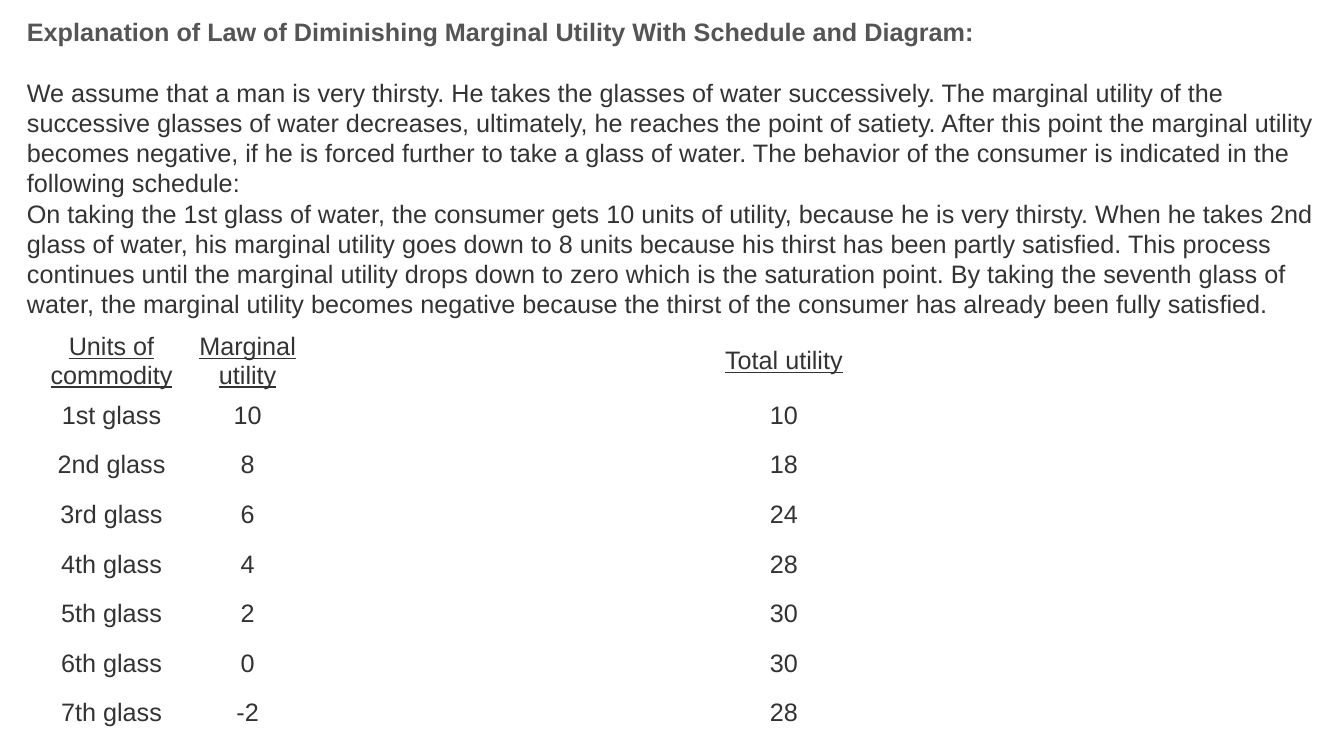
from pptx import Presentation
from pptx.dml.color import RGBColor
from pptx.enum import shapes, text
from pptx.util import Cm, Pt

# Content
TITLE = "Explanation of Law of Diminishing Marginal Utility With Schedule and Diagram:"
EXPLANATION = [
    "We assume that a man is very thirsty. He takes the glasses of water successively. "
    "The marginal utility of the successive glasses of water decreases, ultimately, he "
    "reaches the point of satiety. After this point the marginal utility becomes negative, "
    "if he is forced further to take a glass of water. The behavior of the consumer is "
    "indicated in the following schedule:",
    "On taking the 1st glass of water, the consumer gets 10 units of utility, because he is "
    "very thirsty. When he takes 2nd glass of water, his marginal utility goes down to 8 "
    "units because his thirst has been partly satisfied. This process continues until the "
    "marginal utility drops down to zero which is the saturation point. By taking the "
    "seventh glass of water, the marginal utility becomes negative because the thirst of "
    "the consumer has already been fully satisfied.",
]
SCHEDULE = [
    ("Units of commodity", "Marginal utility", "Total utility"),
    ("1st glass", "10", "10"),
    ("2nd glass", "8", "18"),
    ("3rd glass", "6", "24"),
    ("4th glass", "4", "28"),
    ("5th glass", "2", "30"),
    ("6th glass", "0", "30"),
    ("7th glass", "-2", "28"),
]

# Style and layout
WHITE = RGBColor(0xFF, 0xFF, 0xFF)
TITLE_GREY = RGBColor(0x55, 0x55, 0x55)
TEXT_GREY = RGBColor(0x33, 0x33, 0x33)
LINE_PITCH = Pt(21.6)
COLUMN_WIDTHS = [Cm(3.38), Cm(3.48), Cm(23.55)]
ROW_HEIGHT = Cm(1.25)
CELL_MARGIN = Cm(0.03)


def format_runs(paragraph, color, bold=False, underline=False):
    for run in paragraph.runs:
        run.font.name = "Arial"
        run.font.size = Pt(18)
        run.font.color.rgb = color
        run.font.bold = bold
        run.font.underline = underline


def add_schedule(slide):
    table = slide.shapes.add_table(
        len(SCHEDULE), len(COLUMN_WIDTHS), Cm(1.12), Cm(8.36),
        sum(COLUMN_WIDTHS), ROW_HEIGHT * len(SCHEDULE)).table
    table.first_row = table.horz_banding = False
    for column, width in zip(table.columns, COLUMN_WIDTHS):
        column.width = width
    for row_index, values in enumerate(SCHEDULE):
        table.rows[row_index].height = ROW_HEIGHT
        for column_index, value in enumerate(values):
            cell = table.cell(row_index, column_index)
            cell.fill.background()
            cell.vertical_anchor = text.MSO_ANCHOR.MIDDLE
            cell.margin_left = cell.margin_right = CELL_MARGIN
            cell.margin_top = cell.margin_bottom = CELL_MARGIN
            cell.text_frame.text = value
            paragraph = cell.text_frame.paragraphs[0]
            paragraph.alignment = text.PP_ALIGN.CENTER
            format_runs(paragraph, TEXT_GREY, underline=row_index == 0)


def add_explanation(slide):
    shape = slide.shapes.add_shape(
        shapes.MSO_SHAPE.RECTANGLE, Cm(0.43), Cm(0.25), Cm(33.05), Cm(7.95))
    shape.shadow.inherit = False
    shape.fill.solid()
    shape.fill.fore_color.rgb = WHITE
    shape.line.fill.background()
    frame = shape.text_frame
    frame.word_wrap = True
    frame.vertical_anchor = text.MSO_ANCHOR.MIDDLE
    frame.text = "\n".join([TITLE, *EXPLANATION])
    for index, paragraph in enumerate(frame.paragraphs):
        is_title = index == 0
        paragraph.alignment = text.PP_ALIGN.LEFT
        paragraph.line_spacing = LINE_PITCH
        paragraph.space_after = LINE_PITCH if is_title else Pt(0)
        format_runs(paragraph, TITLE_GREY if is_title else TEXT_GREY, bold=is_title)


def main():
    presentation = Presentation()
    presentation.slide_width, presentation.slide_height = Cm(33.87), Cm(19.05)
    slide = presentation.slides.add_slide(presentation.slide_layouts[6])
    add_schedule(slide)
    add_explanation(slide)
    presentation.save("out.pptx")


if __name__ == "__main__":
    main()
